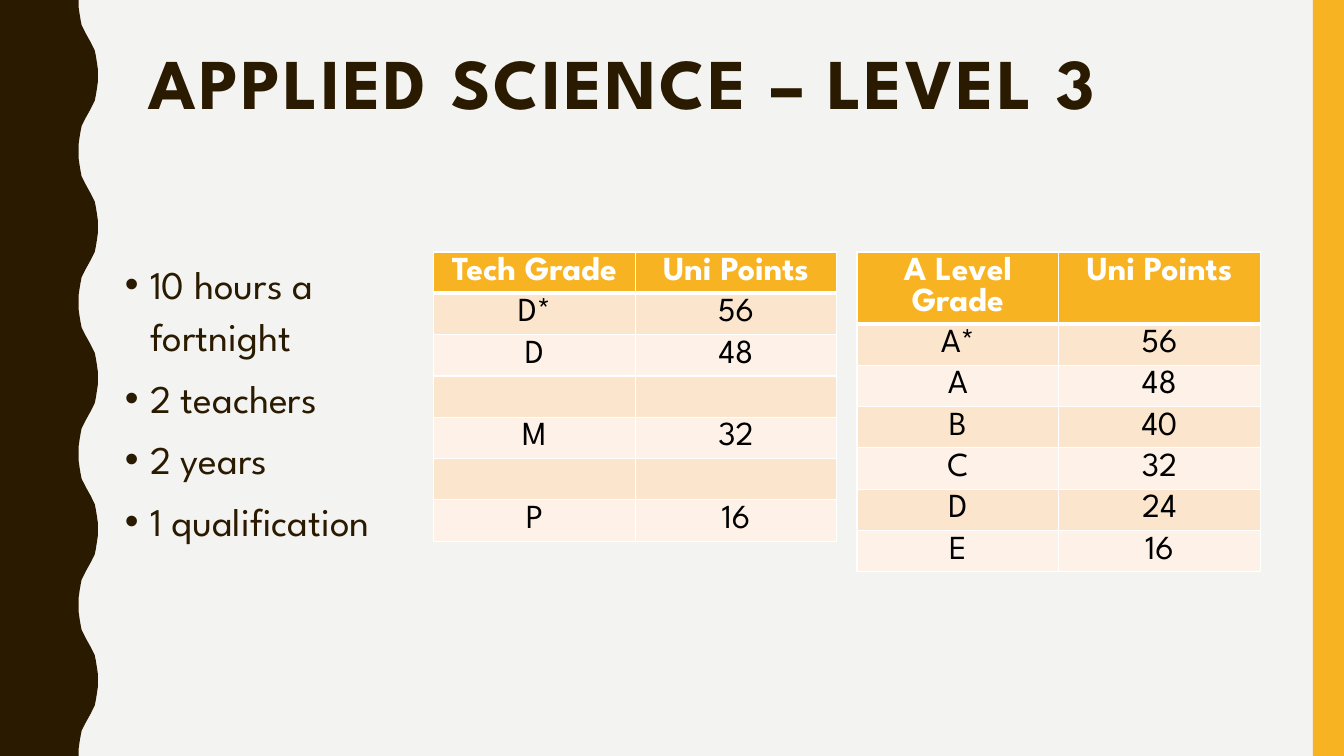
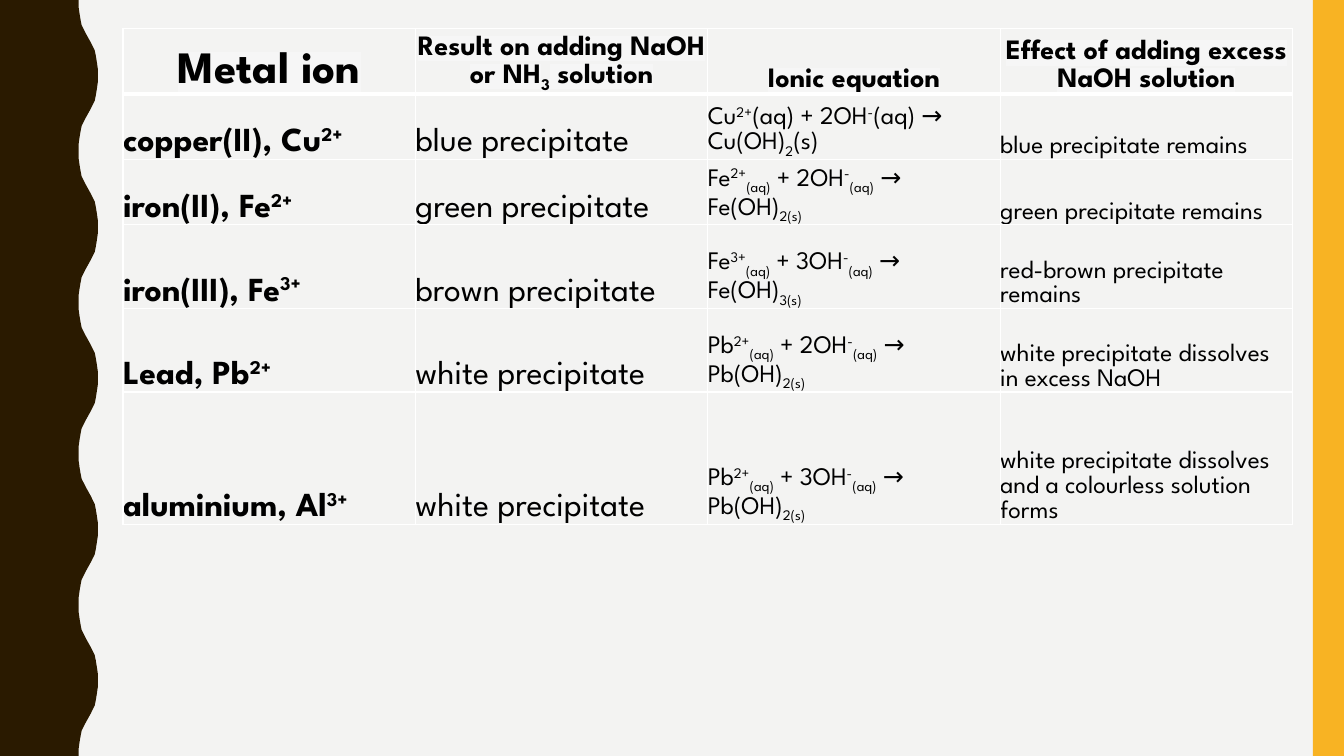
from dataclasses import dataclass
from lxml.etree import SubElement, Element
from pptx import Presentation
from pptx.dml.color import RGBColor as RGB
from pptx.enum.shapes import MSO_SHAPE as Shape
from pptx.enum.text import MSO_ANCHOR as Anchor, MSO_AUTO_SIZE as Auto, PP_ALIGN as Align
from pptx.oxml.ns import qn
from pptx.util import Inches, Pt


@dataclass(frozen=True)
class Theme:
    font: str = "League Spartan"
    back: str = "F3F3F2"
    dark: str = "2A1A00"
    gold: str = "F8B323"
    white: str = "FFFFFF"
    black: str = "000000"
    odd: str = "FCE5CD"
    even: str = "FEF2E8"
    glow: str = "F6F6F6"
    title: int = 51
    body: int = 28
    head: int = 32
    cell: int = 24
    label: int = 20
    note: int = 18


LOOK = Theme()
SHIFT = {"^": "30000", "_": "-25000"}


def put(item, values):
    for name, value in values.items():
        setattr(item, name, value)


def color(tag, parent, code):
    node = SubElement(parent, qn(tag))
    SubElement(node, qn("a:srgbClr"), val=code)


class Deck:
    def __init__(self, look):
        self.look = look
        self.show = Presentation()
        put(self.show, {"slide_width": Inches(13.33), "slide_height": Inches(7.5)})
        fill = self.show.slide_master.background.fill
        fill.solid()
        fill.fore_color.rgb = RGB.from_string(look.back)

    def paint(self, shape, code):
        shape.shadow.inherit = False
        shape.fill.solid()
        shape.fill.fore_color.rgb = RGB.from_string(code)
        shape.line.fill.background()

    def page(self, layout):
        self.slide = self.show.slides.add_slide(self.show.slide_layouts[layout])
        self.wave()
        band = self.slide.shapes.add_shape(
            Shape.RECTANGLE, Inches(13.02), 0, Inches(0.31), Inches(7.5))
        self.paint(band, self.look.gold)

    def wave(self):
        curve = [(78, 0), (78, 7), (79, 14), (80, 20), (81, 25), (83, 29), (85, 33)]
        rise = curve + [(175 - x, 75 - y) for x, y in reversed(curve)]
        cycle = rise + [(x, 150 - y) for x, y in reversed(rise)]
        edge = [(x, y + 150 * turn) for turn in range(5) for x, y in cycle]
        form = self.slide.shapes.build_freeform(0, 0, scale=Inches(0.01))
        form.add_line_segments(edge + [(0, 750)], close=True)
        self.paint(form.convert_to_shape(), self.look.dark)

    def text(self, para, words, size, code, bold=False):
        for part in words.split("|"):
            run = para.add_run()
            run.text = part.lstrip("^_")
            put(run.font, {"size": Pt(size), "bold": bold, "name": self.look.font})
            run.font.color.rgb = RGB.from_string(code)
            if part[:1] in SHIFT:
                run.font._element.set("baseline", SHIFT[part[0]])

    def title(self, words):
        box = self.slide.shapes.title
        put(box, {"left": Inches(1.37), "top": Inches(0.42),
                  "width": Inches(11.13), "height": Inches(1.63)})
        put(box.text_frame, {"word_wrap": True, "auto_size": Auto.NONE,
                             "vertical_anchor": Anchor.TOP})
        para = box.text_frame.paragraphs[0]
        put(para, {"alignment": Align.LEFT, "line_spacing": 0.9})
        self.text(para, words, self.look.title, self.look.dark, True)
        para.runs[0].font._element.set("spc", "200")

    def points(self, items, left, top, width, height):
        box = self.slide.shapes.add_textbox(*map(Inches, (left, top, width, height)))
        frame = box.text_frame
        put(frame, {"word_wrap": True, "auto_size": Auto.NONE})
        for index, item in enumerate(items):
            para = frame.add_paragraph() if index else frame.paragraphs[0]
            put(para, {"line_spacing": 1.1, "space_before": Pt(7)})
            self.text(para, item, self.look.body, self.look.dark)
            props = para._p.get_or_add_pPr()
            props.set("marL", str(Inches(0.25)))
            props.set("indent", str(Inches(-0.25)))
            color("a:buClr", props, self.look.dark)
            SubElement(props, qn("a:buFont"), typeface="Arial")
            SubElement(props, qn("a:buChar"), char="•")

    def grid(self, left, top, width, heights, cols):
        frame = self.slide.shapes.add_table(
            len(heights), cols, Inches(left), Inches(top),
            Inches(width * cols), Inches(sum(heights)))
        table = frame.table
        put(table, {"first_row": False, "horz_banding": False})
        for col in table.columns:
            col.width = Inches(width)
        for index, (row, height) in enumerate(zip(table.rows, heights)):
            row.height = Inches(height)
            for cell in row.cells:
                self.edges(cell, index)
        return table

    def edges(self, cell, index):
        props = cell._tc.get_or_add_tcPr()
        thick = {0: "B", 1: "T"}.get(index)
        for side in "LRTB":
            wide = Pt(3 if side == thick else 1)
            line = SubElement(props, qn("a:ln" + side), w=str(wide))
            color("a:solidFill", line, self.look.white)

    def grades(self, left, heads, rows, top_row):
        look = self.look
        table = self.grid(left, 2.5, 2, [top_row] + [0.41] * len(rows), 2)
        for r, row in enumerate([heads] + rows):
            shade = look.gold if r == 0 else (look.even, look.odd)[r % 2]
            for c, words in enumerate(row):
                cell = table.cell(r, c)
                cell.fill.solid()
                cell.fill.fore_color.rgb = RGB.from_string(shade)
                para = cell.text_frame.paragraphs[0]
                para.alignment = Align.CENTER
                if words:
                    self.text(para, words, look.cell,
                              look.black if r else look.white, r == 0)

    def ions(self, heads, rows, heights):
        look = self.look
        table = self.grid(1.22, 0.28, 2.9, heights, 4)
        tops = (look.head, look.label, look.label, look.label)
        sizes = (look.cell, look.cell, look.note, look.note)
        for r, row in enumerate([heads] + rows):
            for c, words in enumerate(row):
                cell = table.cell(r, c)
                cell.fill.background()
                put(cell, {"margin_left": 0, "margin_right": 0, "margin_top": 0,
                           "margin_bottom": 0, "vertical_anchor": Anchor.BOTTOM})
                para = cell.text_frame.paragraphs[0]
                put(para, {"line_spacing": 1.07, "space_after": Pt(8),
                           "alignment": Align.LEFT if r else Align.CENTER})
                self.text(para, words, (sizes if r else tops)[c], look.black,
                          r == 0 or c == 0)
                if r == 0:
                    self.mark(para)

    def mark(self, para):
        for run in para.runs:
            glow = Element(qn("a:highlight"))
            SubElement(glow, qn("a:srgbClr"), val=self.look.glow)
            run.font._element.find(qn("a:latin")).addprevious(glow)


def main():
    deck = Deck(LOOK)
    deck.page(5)
    deck.title("APPLIED SCIENCE – LEVEL 3")
    deck.points(["10 hours a fortnight", "2 teachers", "2 years", "1 qualification"],
                1.14, 2.49, 3.42, 4.71)
    deck.grades(4.3, ("Tech Grade", "Uni Points"),
                [("D*", "56"), ("D", "48"), ("", ""), ("M", "32"), ("", ""), ("P", "16")],
                0.41)
    deck.grades(8.5, ("A Level Grade", "Uni Points"),
                [("A*", "56"), ("A", "48"), ("B", "40"), ("C", "32"), ("D", "24"), ("E", "16")],
                0.71)

    deck.page(6)
    heads = ("Metal ion", "Result on adding NaOH or NH|_3| solution",
             "Ionic equation", "Effect of adding excess NaOH solution")
    iron = "Fe|^{0}+|_(aq)| + {0}OH|^-|_(aq)| → Fe(OH)|_{0}(s)"
    lead = "Pb|^2+|_(aq)| + {}OH|^-|_(aq)| → Pb(OH)|_2(s)"
    rows = [
        ("copper(II), Cu|^2+", "blue precipitate",
         "Cu|^2+|(aq) + 2OH|^-|(aq) → Cu(OH)|_2|(s)", "blue precipitate remains"),
        ("iron(II), Fe|^2+", "green precipitate",
         iron.format(2), "green precipitate remains"),
        ("iron(III), Fe|^3+", "brown precipitate",
         iron.format(3), "red-brown precipitate remains"),
        ("Lead, Pb|^2+", "white precipitate",
         lead.format(2), "white precipitate dissolves in excess NaOH"),
        ("aluminium, Al|^3+", "white precipitate",
         lead.format(3), "white precipitate dissolves and a colourless solution forms"),
    ]
    deck.ions(heads, rows, [0.65, 0.65, 0.65, 0.83, 0.83, 1.31])
    deck.show.save("out.pptx")


if __name__ == "__main__":
    main()
